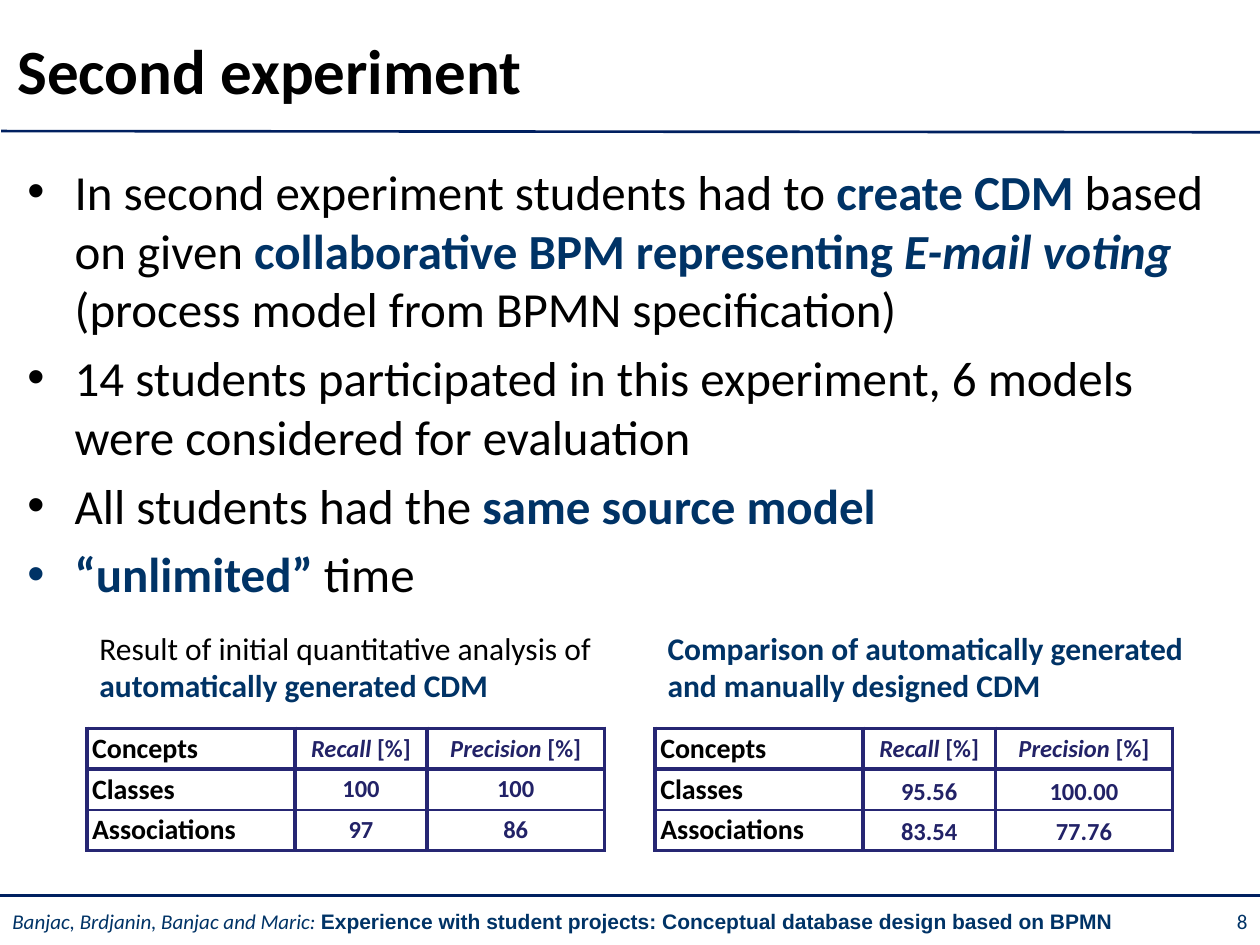
from dataclasses import dataclass, field
from lxml import etree
from pptx import Presentation
from pptx.dml.color import RGBColor
from pptx.enum.shapes import MSO_CONNECTOR
from pptx.enum.text import MSO_ANCHOR, PP_ALIGN
from pptx.oxml.ns import qn
from pptx.util import Pt

LINE = MSO_CONNECTOR.STRAIGHT
MID, TOP = MSO_ANCHOR.MIDDLE, MSO_ANCHOR.TOP
LEFT, MIDDLE, RIGHT = PP_ALIGN.LEFT, PP_ALIGN.CENTER, PP_ALIGN.RIGHT

HUES = {
    "ink": "000000",
    "navy": "003366",
    "rule": "002060",
    "edge": "262673",
    "data": "222267",
    "white": "FFFFFF",
}


@dataclass
class Run:
    text: str
    hue: str = "ink"
    form: dict = field(default_factory=dict)


@dataclass
class Box:
    left: float
    top: float
    width: float
    height: float
    paras: list[list[Run]]
    size: float
    anchor: int = TOP
    align: int = LEFT
    bullet: bool = False


@dataclass
class Grid:
    left: float
    rows: list[tuple[str, str, str]]
    space: float


BOLD = {"bold": True}
SLANT = {"italic": True}
BOTH = {"bold": True, "italic": True}


def color(key: str) -> RGBColor:
    return RGBColor.from_string(HUES[key])


def write(para, runs: list[Run], size: float) -> None:
    for item in runs:
        run = para.add_run()
        run.text = item.text
        form = {"name": "Calibri", "size": Pt(size), "bold": False, "italic": False}
        for key, value in (form | item.form).items():
            setattr(run.font, key, value)
        run.font.color.rgb = color(item.hue)


def add_bullet(para) -> None:
    para.space_before = Pt(5.6)
    props = para._p.get_or_add_pPr()
    props.set("marL", str(Pt(27)))
    props.set("indent", str(Pt(-27)))
    etree.SubElement(props, qn("a:buFont"), typeface="Arial")
    etree.SubElement(props, qn("a:buChar"), char="•")


def draw_box(slide, box: Box) -> None:
    place = map(Pt, (box.left, box.top, box.width, box.height))
    frame = slide.shapes.add_textbox(*place).text_frame
    frame.word_wrap = True
    frame.vertical_anchor = box.anchor
    for i, runs in enumerate(box.paras):
        para = frame.add_paragraph() if i else frame.paragraphs[0]
        para.alignment = box.align
        if box.bullet:
            add_bullet(para)
        write(para, runs, box.size)


def draw_rule(slide, left: float, top: float, right: float, end: float) -> None:
    rule = slide.shapes.add_connector(LINE, Pt(left), Pt(top), Pt(right), Pt(end))
    rule.line.color.rgb = color("rule")
    rule.line.width = Pt(1.5)
    etree.SubElement(rule._element.spPr, qn("a:effectLst"))


def add_edge(cell, side: str, width: float) -> None:
    props = cell._tc.get_or_add_tcPr()
    edge = etree.SubElement(props, qn(f"a:ln{side}"), w=str(Pt(width)))
    fill = etree.SubElement(edge, qn("a:solidFill"))
    etree.SubElement(fill, qn("a:srgbClr"), val=HUES["edge"])


def cell_runs(text: str, row: int, col: int) -> list[Run]:
    if col == 0:
        return [Run(text, "ink", BOLD)]
    if row == 0:
        return [Run(f"{text} ", "data", BOTH), Run("[%]", "data", BOLD)]
    return [Run(text, "data", BOLD)]


def draw_grid(slide, grid: Grid) -> None:
    widths = (118.8, 75.6, 101.3)
    high = 23.28
    last = len(grid.rows) - 1
    place = map(Pt, (grid.left, 416.2, sum(widths), high * len(grid.rows)))
    table = slide.shapes.add_table(len(grid.rows), len(widths), *place).table
    table.first_row = table.horz_banding = False
    for col, width in zip(table.columns, widths):
        col.width = Pt(width)
    for r, texts in enumerate(grid.rows):
        table.rows[r].height = Pt(high)
        for c, text in enumerate(texts):
            cell = table.cell(r, c)
            side, end = (5, 0) if c else (2.9, 1.4)
            form = {
                "margin_left": Pt(side),
                "margin_right": Pt(side),
                "margin_top": Pt(end),
                "margin_bottom": Pt(end),
                "vertical_anchor": MID,
            }
            for key, value in form.items():
                setattr(cell, key, value)
            thin = {"T": r == last, "B": r == last - 1}
            for edge in "LRTB":
                add_edge(cell, edge, 1 if thin.get(edge) else 2.25)
            cell.fill.solid()
            cell.fill.fore_color.rgb = color("white")
            para = cell.text_frame.paragraphs[0]
            para.alignment = MIDDLE if c else LEFT
            if r and c:
                para.line_spacing = grid.space
            write(para, cell_runs(text, r, c), 14 if c else 16)


HEAD = ("Concepts", "Recall", "Precision")
NEAR, FAR = 49.7, 374.4

POINTS = [
    [
        Run("In second experiment students had to "),
        Run("create CDM ", "navy", BOLD),
        Run("based on given "),
        Run("collaborative BPM representing ", "navy", BOLD),
        Run("E-mail voting ", "navy", BOTH),
        Run("(process model from BPMN specification)"),
    ],
    [Run("14 students participated in this experiment, 6 models were considered for evaluation")],
    [Run("All students had the "), Run("same source model", "navy", BOLD)],
    [Run("“unlimited” ", "navy", BOLD), Run("time")],
]
FOOT = [
    Run("Banjac, Brdjanin, Banjac and Maric: ", "navy", SLANT),
    Run(
        "Experience with student projects: Conceptual database design based on BPMN",
        "navy",
        BOLD | {"name": "Arial"},
    ),
]
FIRST = [
    Run("Result of initial quantitative analysis of "),
    Run("automatically generated CDM", "navy", BOLD),
]
SECOND = [Run("Comparison of automatically generated and manually designed CDM", "navy", BOLD)]

BOXES = [
    Box(0, 512.6, 686.2, 27.4, [FOOT], 12, MID),
    Box(2.9, 11.5, 702.7, 56.2, [[Run("Second experiment", "ink", BOLD)]], 36, MID),
    Box(8.6, 88.6, 700.6, 416.9, POINTS, 28, bullet=True),
    Box(686.2, 512.6, 33.8, 27.4, [[Run("8", "navy")]], 12, MID, RIGHT),
    Box(NEAR, 355.7, 295.9, 51.1, [FIRST], 18),
    Box(FAR, 355.7, 314.6, 51.1, [SECOND], 18),
]
GRIDS = [
    Grid(FAR, [HEAD, ("Classes", "95.56", "100.00"), ("Associations", "83.54", "77.76")], 1.15),
    Grid(NEAR, [HEAD, ("Classes", "100", "100"), ("Associations", "97", "86")], 1.0),
]


def main() -> None:
    deck = Presentation()
    deck.slide_width, deck.slide_height = Pt(720), Pt(540)
    slide = deck.slides.add_slide(deck.slide_layouts[6])
    draw_rule(slide, 0.7, 74.9, 720.7, 75.6)
    draw_rule(slide, -1.4, 511.9, 721.4, 511.9)
    for box in BOXES:
        draw_box(slide, box)
    for grid in GRIDS:
        draw_grid(slide, grid)
    deck.save("out.pptx")


if __name__ == "__main__":
    main()
